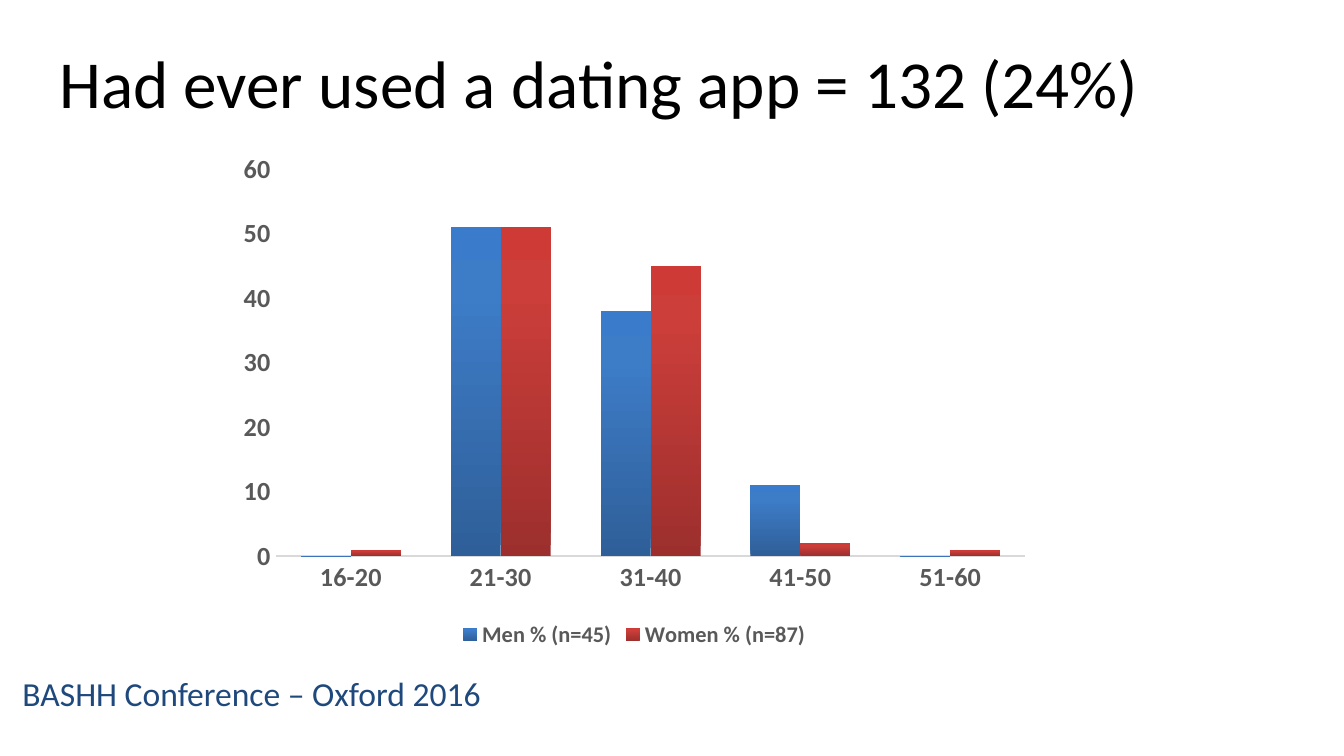
from lxml import etree
from pptx import Presentation
from pptx.chart.data import CategoryChartData
from pptx.dml.color import RGBColor
from pptx.enum.chart import XL_CHART_TYPE, XL_LEGEND_POSITION, XL_TICK_MARK
from pptx.enum.text import MSO_ANCHOR, PP_ALIGN
from pptx.oxml import parse_xml
from pptx.oxml.ns import nsdecls, qn
from pptx.util import Pt

COLUMN = XL_CHART_TYPE.COLUMN_CLUSTERED
BOTTOM = XL_LEGEND_POSITION.BOTTOM
NO_TICK = XL_TICK_MARK.NONE
MIDDLE = MSO_ANCHOR.MIDDLE
LEFT = PP_ALIGN.LEFT

FACE = "Calibri"
BLACK = RGBColor(0x00, 0x00, 0x00)
NAVY = RGBColor(0x1F, 0x49, 0x7D)
GRAY = RGBColor(0x59, 0x59, 0x59)
PALE = RGBColor(0xD9, 0xD9, 0xD9)
BLUES = (RGBColor(0x2F, 0x5F, 0x99), RGBColor(0x3D, 0x7C, 0xC7),
         RGBColor(0x3A, 0x7C, 0xCB))
REDS = (RGBColor(0x9C, 0x2F, 0x2D), RGBColor(0xCB, 0x3E, 0x3A),
        RGBColor(0xCE, 0x3B, 0x37))
STOPS = (0, 80, 100)

AGES = ("16-20", "21-30", "31-40", "41-50", "51-60")
GROUPS = (
    ("Men % (n=45)", (0, 51, 38, 11, 0), BLUES),
    ("Women % (n=87)", (1, 51, 45, 2, 1), REDS),
)
PLOT = {"x": 0.06, "y": 0.05, "w": 0.92, "h": 0.76}


def style(font, size, color, bold=False):
    font.name = FACE
    font.size = Pt(size)
    font.bold = bold
    font.color.rgb = color


def place(shape, left, top, width, height):
    shape.left, shape.top = Pt(left), Pt(top)
    shape.width, shape.height = Pt(width), Pt(height)


def write(frame, text, size, color):
    frame.word_wrap = True
    para = frame.paragraphs[0]
    para.alignment = LEFT
    run = para.add_run()
    run.text = text
    style(run.font, size, color)


def add_title(slide, text):
    title = slide.shapes.title
    place(title, 24.5, 10, 664, 67.7)
    title.text_frame.vertical_anchor = MIDDLE
    write(title.text_frame, text, 36, BLACK)


def add_label(slide, text):
    box = slide.shapes.add_textbox(Pt(5), Pt(357), Pt(344), Pt(49.7))
    write(box.text_frame, text, 18, NAVY)


def shade(series, colors):
    """Fill a series with a three-stop gradient that rises from the base."""
    stops = "".join(f'<a:gs pos="{stop * 1000}"><a:srgbClr val="{color}"/></a:gs>'
                    for stop, color in zip(STOPS, colors))
    fill = parse_xml(f'<a:gradFill {nsdecls("a")} rotWithShape="1">'
                     f'<a:gsLst>{stops}</a:gsLst>'
                     '<a:lin ang="16200000" scaled="0"/></a:gradFill>')
    series.format.line.fill.background()
    series._element.get_or_add_spPr().insert(0, fill)


def set_plot(chart):
    """Fix the inner plot area as fractions of the chart frame."""
    area = chart._chartSpace.chart.plotArea
    for old in area.findall(qn("c:layout")):
        area.remove(old)
    layout = etree.Element(qn("c:layout"))
    manual = etree.SubElement(layout, qn("c:manualLayout"))
    parts = [("layoutTarget", "inner"), ("xMode", "edge"), ("yMode", "edge")]
    for tag, value in parts + list(PLOT.items()):
        etree.SubElement(manual, qn(f"c:{tag}")).set("val", str(value))
    area.insert(0, layout)


def set_axis(axis):
    axis.major_tick_mark = axis.minor_tick_mark = NO_TICK
    axis.has_major_gridlines = False
    style(axis.tick_labels.font, 14, GRAY, True)


def add_bars(slide):
    data = CategoryChartData()
    data.categories = AGES
    for name, values, _ in GROUPS:
        data.add_series(name, values)
    chart = slide.shapes.add_chart(COLUMN, Pt(121.7), Pt(77), Pt(436.3),
                                   Pt(272.9), data).chart
    style(chart.font, 10, BLACK)
    chart.has_title = False

    ages, scale = chart.category_axis, chart.value_axis
    for axis in (ages, scale):
        set_axis(axis)
    ages.format.line.color.rgb = PALE
    ages.format.line.width = Pt(1)
    scale.format.line.fill.background()
    scale.minimum_scale, scale.maximum_scale = 0, 60
    scale.major_unit = 10

    chart.has_legend = True
    chart.legend.position = BOTTOM
    chart.legend.include_in_layout = False
    style(chart.legend.font, 12, GRAY, True)

    plot = chart.plots[0]
    plot.gap_width, plot.overlap = 100, 0
    plot.vary_by_categories = False
    for series, (_, _, colors) in zip(plot.series, GROUPS):
        shade(series, colors)
    set_plot(chart)


def main():
    deck = Presentation()
    deck.slide_width, deck.slide_height = Pt(720), Pt(405)
    slide = deck.slides.add_slide(deck.slide_layouts[5])
    add_label(slide, "BASHH Conference – Oxford 2016")
    add_title(slide, "Had ever used a dating app = 132 (24%)")
    add_bars(slide)
    deck.save("out.pptx")


if __name__ == "__main__":
    main()
